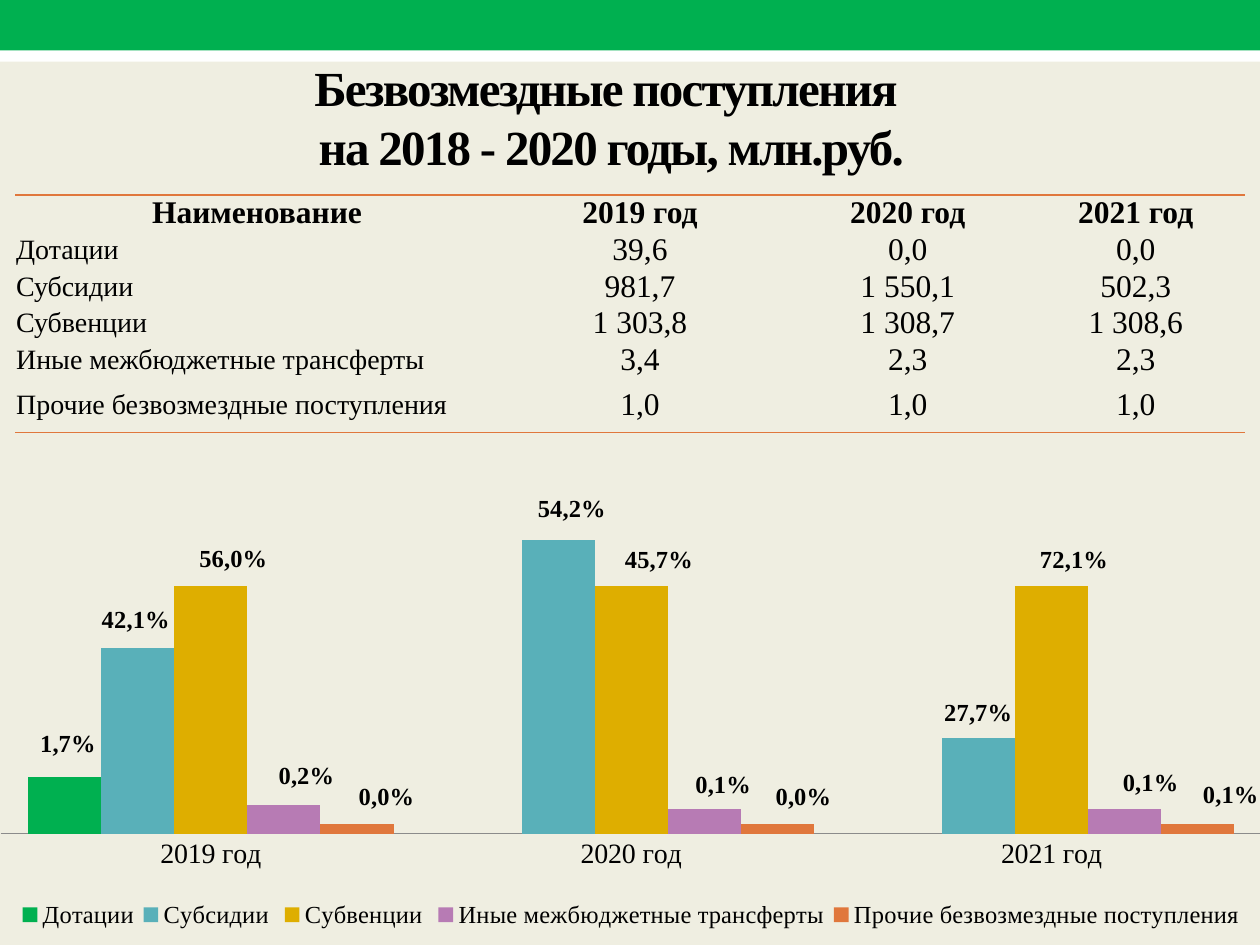
from lxml import etree
from pptx import Presentation
from pptx.chart.data import CategoryChartData
from pptx.dml.color import RGBColor
from pptx.enum.chart import XL_CHART_TYPE as Kind, XL_LABEL_POSITION as Spot
from pptx.enum.chart import XL_LEGEND_POSITION as Side, XL_TICK_MARK as Tick
from pptx.enum.shapes import MSO_SHAPE as Form
from pptx.enum.text import MSO_ANCHOR as Anchor, PP_ALIGN as Align
from pptx.oxml import parse_xml
from pptx.oxml.ns import nsdecls, qn
from pptx.util import Pt

FACE = "Times New Roman"
ORANGE = "E0773C"
YEARS = ["2019 год", "2020 год", "2021 год"]


def color(code):
    return RGBColor.from_string(code)


def style(font, size, bold=False):
    font.name = FACE
    font.size = Pt(size)
    font.bold = bold
    font.color.rgb = color("000000")


deck = Presentation()
deck.slide_width, deck.slide_height = Pt(720), Pt(540)
slide = deck.slides.add_slide(deck.slide_layouts[6])
slide.background.fill.solid()
slide.background.fill.fore_color.rgb = color("EFEEE1")

# Bands along the top edge
for top, high, code in [(17.3, 18, "FFFFFF"), (0, 28.8, "00B050")]:
    band = slide.shapes.add_shape(Form.RECTANGLE, 0, Pt(top), Pt(720), Pt(high))
    band.shadow.inherit = False
    band.fill.solid()
    band.fill.fore_color.rgb = color(code)
    band.line.fill.background()

# Title
title = slide.shapes.add_textbox(Pt(25.2), Pt(27.4), Pt(648), Pt(77.8))
frame = title.text_frame
frame.word_wrap = True
frame.vertical_anchor = Anchor.MIDDLE
para = frame.paragraphs[0]
para.text = "Безвозмездные поступления \vна 2018 - 2020 годы, млн.руб."
para.alignment = Align.CENTER
for run in para.runs:
    style(run.font, 28, True)
    run.font._element.set("spc", "-100")

# Chart: each label is its text and its shift from the bar end, in points
series = [
    ("Дотации", "00B050", [300, None, None], [("1,7%", 2, -8)]),
    ("Субсидии ", "59B0B9", [981.7, 1550.1, 502.2],
     [("42,1%", -1, -5), ("54,2%", 8, -7), ("27,7%", 0, -4)]),
    ("Субвенции ", "DEAE00", [1303.8, 1308.8, 1308.6],
     [("56,0%", 13, -5), ("45,7%", 16, -4), ("72,1%", 13, -4)]),
    ("Иные межбюджетные трансферты", "B77BB4", [150, 130, 130],
     [("0,2%", 13, -6), ("0,1%", 11, -3), ("0,1%", 15, -4)]),
    ("Прочие безвозмездные поступления", ORANGE, [50, 50, 50],
     [("0,0%", 17, -5), ("0,0%", 15, -5), ("0,1%", 19, -6)]),
]
wide, high = 721.4, 277.2
data = CategoryChartData(number_format="#,##0.0")
data.categories = YEARS
for name, code, vals, marks in series:
    data.add_series(name, vals)
chart = slide.shapes.add_chart(
    Kind.COLUMN_CLUSTERED, 0, Pt(265), Pt(wide), Pt(high), data).chart
chart.has_title = False
chart.font.name = "Arial"
chart.font.size = Pt(10)
chart.font.color.rgb = color("000000")
chart.has_legend = True
legend = chart.legend
legend.position = Side.BOTTOM
legend.include_in_layout = False
style(legend.font, 14)

axis = chart.category_axis
axis.major_tick_mark = Tick.NONE
axis.format.line.color.rgb = color("8B8B8B")
style(axis.tick_labels.font, 16)
scale = chart.value_axis
scale.visible = False
scale.has_major_gridlines = False
scale.minimum_scale, scale.maximum_scale = 0, 1800

plot = chart.plots[0]
plot.gap_width, plot.overlap = 75, 0
plot.vary_by_categories = False
for bars, (name, code, vals, marks) in zip(plot.series, series):
    bars.format.fill.solid()
    bars.format.fill.fore_color.rgb = color(code)
    bars.data_labels.show_value = True
    style(bars.data_labels.font, 14, True)
    for i, (text, dx, dy) in enumerate(marks):
        label = bars.points[i].data_label
        label.text_frame.text = text
        style(label.text_frame.paragraphs[0].runs[0].font, 14, True)
        label.position = Spot.OUTSIDE_END
        index = bars._element.xpath(f'c:dLbls/c:dLbl/c:idx[@val="{i}"]')[0]
        index.addnext(parse_xml(
            f'<c:layout {nsdecls("c")}><c:manualLayout>'
            f'<c:x val="{dx / wide:.4f}"/><c:y val="{dy / high:.4f}"/>'
            '</c:manualLayout></c:layout>'))
    # No leader lines between bars and shifted labels
    group = bars._element.find(qn("c:dLbls"))
    for lead in group.findall(qn("c:showLeaderLines")):
        lead.set("val", "0")
    group.append(parse_xml(
        f'<c:extLst {nsdecls("c")}><c:ext uri="{{CE6537A1-D6FC-4f65-9D91-7224C49458BB}}" '
        'xmlns:c15="http://schemas.microsoft.com/office/drawing/2012/chart">'
        '<c15:showLeaderLines val="0"/></c:ext></c:extLst>'))

# Fixed places of plot and legend, as shares of the chart
area = chart._chartSpace.chart.plotArea
key = legend._element
for part, spot, inner, x, y, w, h in [
        (area, 0, '<c:layoutTarget val="inner"/>', 0, 0.059, 1, 0.704),
        (key, 1, "", 0.01, 0.89, 0.98, 0.08)]:
    for old in part.findall(qn("c:layout")):
        part.remove(old)
    part.insert(spot, parse_xml(
        f'<c:layout {nsdecls("c")}><c:manualLayout>{inner}'
        f'<c:xMode val="edge"/><c:yMode val="edge"/><c:x val="{x}"/><c:y val="{y}"/>'
        f'<c:w val="{w}"/><c:h val="{h}"/></c:manualLayout></c:layout>'))

# Table
rows = [
    [" Наименование"] + YEARS,
    ["Дотации", "39,6", "0,0", "0,0"],
    ["Субсидии", "981,7", "1 550,1", "502,3"],
    ["Субвенции", "1 303,8", "1 308,7", "1 308,6"],
    ["Иные межбюджетные трансферты", "3,4", "2,3", "2,3"],
    ["Прочие безвозмездные поступления", "1,0", "1,0", "1,0"],
]
last = len(rows) - 1
table = slide.shapes.add_table(
    len(rows), 4, Pt(8.6), Pt(111.4), Pt(702.7), Pt(136)).table
table.first_row = table.horz_banding = False
# Built-in style without fills or grid
table._tbl.tblPr.find(qn("a:tableStyleId")).text = "{2D5ABB26-0587-4C30-8999-92F81FD0307C}"
for col, size in zip(table.columns, [272.2, 169.9, 136.1, 124.5]):
    col.width = Pt(size)
for r, row in enumerate(rows):
    table.rows[r].height = Pt(31 if r == last else 21)
    for c, text in enumerate(row):
        cell = table.cell(r, c)
        cell.fill.background()
        cell.vertical_anchor = Anchor.MIDDLE
        cell.margin_left = cell.margin_right = cell.margin_top = Pt(0.7)
        cell.margin_bottom = 0
        para = cell.text_frame.paragraphs[0]
        para.text = text
        para.line_spacing = 0.93
        name = c == 0 and r > 0
        para.alignment = Align.LEFT if name else Align.CENTER
        style(para.runs[0].font, 16 if name else 18, r == 0)
        if r in (0, last):
            tag = "a:lnT" if r == 0 else "a:lnB"
            line = etree.Element(qn(tag), w=str(Pt(1)))
            fill = etree.SubElement(line, qn("a:solidFill"))
            etree.SubElement(fill, qn("a:srgbClr"), val=ORANGE)
            cell._tc.get_or_add_tcPr().insert(0, line)

deck.save("out.pptx")
